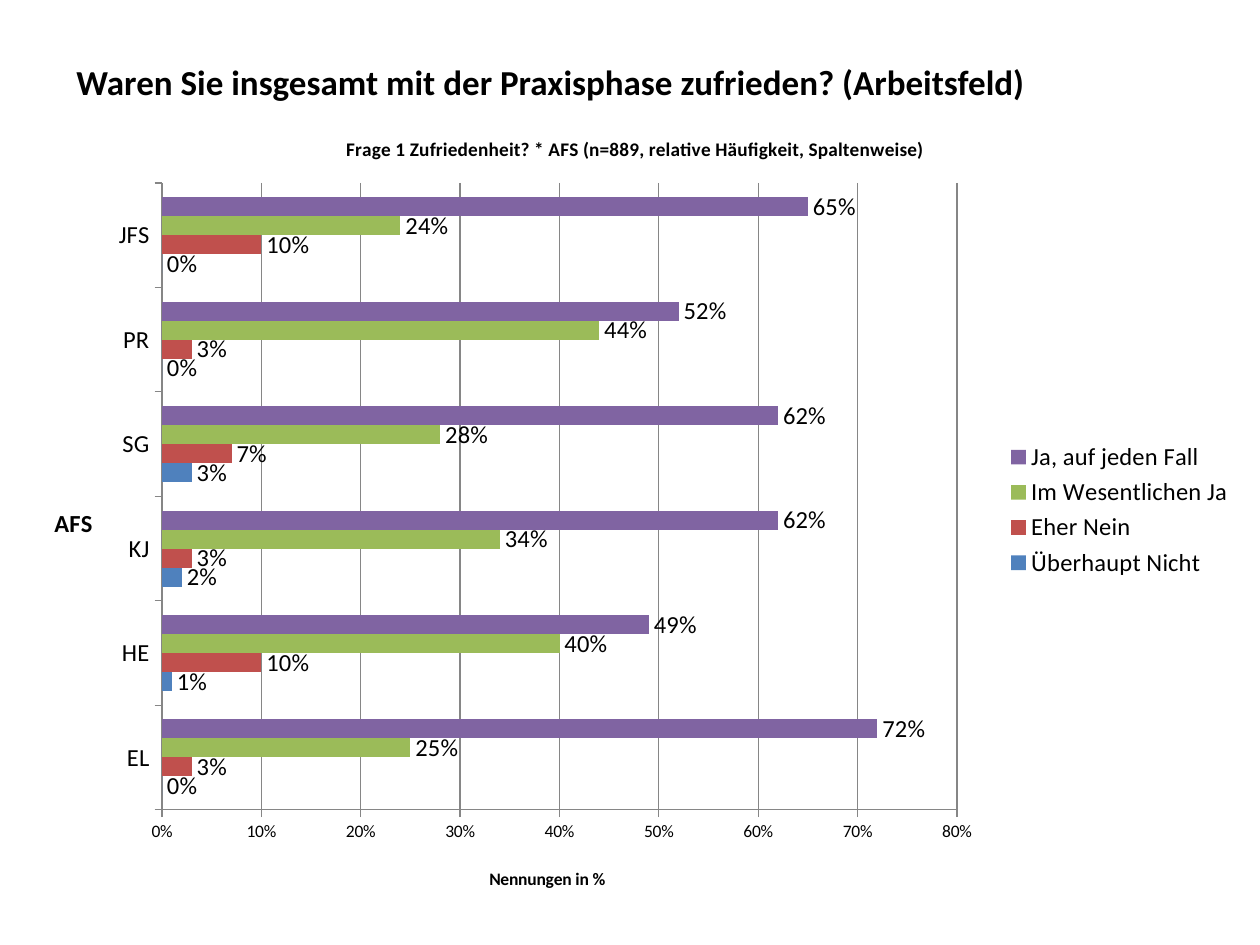
from dataclasses import dataclass

from lxml.etree import SubElement
from pptx import Presentation
from pptx.chart.data import CategoryChartData
from pptx.dml.color import RGBColor
from pptx.enum.chart import XL_CHART_TYPE, XL_LABEL_POSITION, XL_LEGEND_POSITION, XL_TICK_MARK
from pptx.oxml.ns import qn
from pptx.util import Pt

HEADING = "Waren Sie insgesamt mit der Praxisphase zufrieden? (Arbeitsfeld)"
CHART_TITLE = "Frage 1 Zufriedenheit? * AFS (n=889, relative Häufigkeit, Spaltenweise)"
CATEGORY_TITLE = "AFS"
VALUE_TITLE = "Nennungen in %"
FIELDS = ["EL", "HE", "KJ", "SG", "PR", "JFS"]
ANSWERS = [
    ("Überhaupt Nicht", "4F81BD", (0, 0.01, 0.02, 0.03, 0, 0)),
    ("Eher Nein", "C0504D", (0.03, 0.1, 0.03, 0.07, 0.03, 0.1)),
    ("Im Wesentlichen Ja", "9BBB59", (0.25, 0.4, 0.34, 0.28, 0.44, 0.24)),
    ("Ja, auf jeden Fall", "8064A2", (0.72, 0.49, 0.62, 0.62, 0.52, 0.65)),
]

SLIDE_SIZE = (1260, 945)
HEADING_BOX = (64, 54, 1101, 55)
CHART_BOX = (25, 110, 1221, 800)
PLOT_BOX = (162, 183, 795, 627)
CATEGORY_TITLE_SPOT = (50, 502)
VALUE_TITLE_SPOT = (486, 864)


@dataclass(frozen=True)
class Theme:
    font: str = "Calibri"
    ink: str = "000000"
    grid: str = "868686"
    heading: int = 20
    chart_title: int = 11
    label: int = 14
    small: int = 10


THEME = Theme()


def px(value):
    return round(value * 914400 / 126)


def set_font(font, size, bold=False):
    font.name = THEME.font
    font.size = Pt(size)
    font.bold = bold
    font.color.rgb = RGBColor.from_string(THEME.ink)


def write_text(text_frame, text, *, size, bold=True):
    run = text_frame.paragraphs[0].add_run()
    run.text = text
    set_font(run.font, size, bold)


def place(element, index, spot):
    for old_layout in element.findall(qn("c:layout")):
        element.remove(old_layout)
    layout = SubElement(element, qn("c:layout"))
    element.insert(index, layout)
    manual = SubElement(layout, qn("c:manualLayout"))
    left, top, width, height = CHART_BOX
    fractions = [("x", (spot[0] - left) / width), ("y", (spot[1] - top) / height)]
    if len(spot) == 4:
        SubElement(manual, qn("c:layoutTarget")).set("val", "inner")
        fractions += [("w", spot[2] / width), ("h", spot[3] / height)]
    for name in ("xMode", "yMode"):
        SubElement(manual, qn(f"c:{name}")).set("val", "edge")
    for name, fraction in fractions:
        SubElement(manual, qn(f"c:{name}")).set("val", f"{fraction:.4f}")


def format_axis(axis, title, spot, *, label_size, title_size):
    axis.major_tick_mark = XL_TICK_MARK.OUTSIDE
    axis.minor_tick_mark = XL_TICK_MARK.NONE
    axis.format.line.color.rgb = RGBColor.from_string(THEME.grid)
    axis.format.line.width = Pt(0.75)
    set_font(axis.tick_labels.font, label_size)
    text_frame = axis.axis_title.text_frame
    write_text(text_frame, title, size=title_size)
    body = text_frame._txBody.bodyPr
    body.set("rot", "0")
    body.set("vert", "horz")
    place(axis.axis_title._element, 1, spot)


def add_answer_chart(slide):
    data = CategoryChartData(number_format="0%")
    data.categories = FIELDS
    for name, _, values in ANSWERS:
        data.add_series(name, values)
    chart = slide.shapes.add_chart(
        XL_CHART_TYPE.BAR_CLUSTERED, *map(px, CHART_BOX), data
    ).chart
    set_font(chart.font, THEME.small)
    chart.has_title = True
    write_text(chart.chart_title.text_frame, CHART_TITLE, size=THEME.chart_title)

    chart.has_legend = True
    chart.legend.position = XL_LEGEND_POSITION.RIGHT
    chart.legend.include_in_layout = False
    set_font(chart.legend.font, THEME.label)

    format_axis(chart.category_axis, CATEGORY_TITLE, CATEGORY_TITLE_SPOT,
                label_size=THEME.label, title_size=THEME.label)
    value_axis = chart.value_axis
    format_axis(value_axis, VALUE_TITLE, VALUE_TITLE_SPOT,
                label_size=THEME.small, title_size=THEME.small)
    value_axis.minimum_scale = 0
    value_axis.maximum_scale = 0.8
    value_axis.major_unit = 0.1
    value_axis.tick_labels.number_format = "0%"
    value_axis.tick_labels.number_format_is_linked = False
    value_axis.has_major_gridlines = True
    gridline = value_axis.major_gridlines.format.line
    gridline.color.rgb = RGBColor.from_string(THEME.grid)
    gridline.width = Pt(0.75)

    plot = chart.plots[0]
    plot.gap_width = 150
    plot.overlap = 0
    plot.vary_by_categories = False
    for series, (_, color, _) in zip(plot.series, ANSWERS):
        series.format.fill.solid()
        series.format.fill.fore_color.rgb = RGBColor.from_string(color)
        labels = series.data_labels
        labels.show_value = True
        labels.position = XL_LABEL_POSITION.OUTSIDE_END
        labels.number_format = "0%"
        labels.number_format_is_linked = False
        set_font(labels.font, THEME.label)
    place(chart._chartSpace.chart.plotArea, 0, PLOT_BOX)


def main():
    presentation = Presentation()
    presentation.slide_width, presentation.slide_height = map(px, SLIDE_SIZE)
    slide = presentation.slides.add_slide(presentation.slide_layouts[6])
    heading = slide.shapes.add_textbox(*map(px, HEADING_BOX))
    heading.text_frame.word_wrap = True
    write_text(heading.text_frame, HEADING, size=THEME.heading)
    add_answer_chart(slide)
    presentation.save("out.pptx")


if __name__ == "__main__":
    main()
